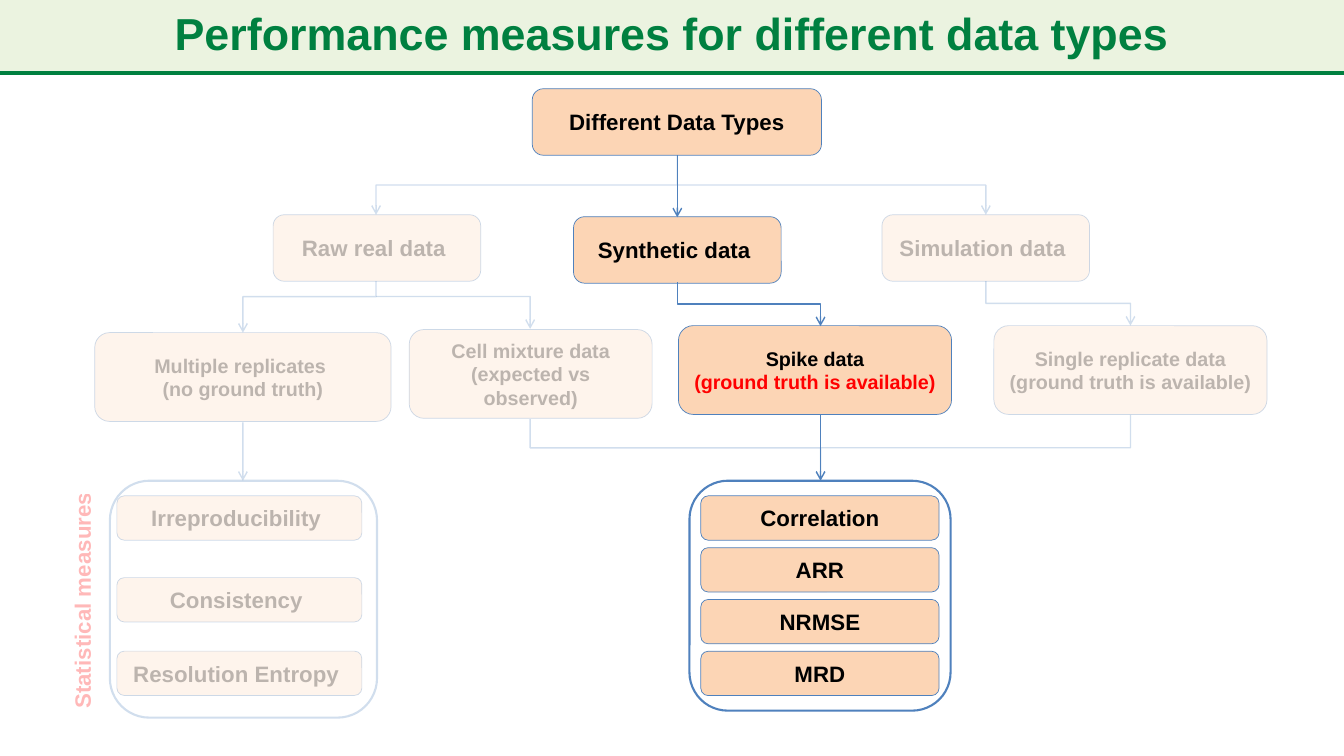
from lxml import etree
from pptx import Presentation
from pptx.dml.color import RGBColor
from pptx.enum.shapes import MSO_CONNECTOR, MSO_SHAPE
from pptx.enum.text import MSO_ANCHOR, PP_ALIGN
from pptx.oxml.ns import qn
from pptx.util import Pt

ROUNDED = MSO_SHAPE.ROUNDED_RECTANGLE
STRAIGHT, ELBOW = MSO_CONNECTOR.STRAIGHT, MSO_CONNECTOR.ELBOW
CENTER, MIDDLE = PP_ALIGN.CENTER, MSO_ANCHOR.MIDDLE

COLORS = {"green": "008040", "band": "EBF3E0", "peach": "FCD5B5",
          "blue": "4F81BD", "black": "000000", "red": "FF0000"}
FONT = "Arial"
LARGE, SMALL = 15.9, 14.1
FADED, FADED_EDGE, SOLID = 25, 28, 100

# Content
TITLE = "Performance measures for different data types"
SIDE_LABEL = "Statistical measures"

# Data types: lines, left, top, width, highlighted
TYPE_HEIGHT = 47.5
DATA_TYPES = [
    (["Different Data Types"], 380.2, 63.4, 206.6, True),
    (["Raw real data "], 195.1, 153.4, 148.3, False),
    (["Synthetic data "], 409.7, 154.8, 148.3, True),
    (["Simulation data "], 630, 153.4, 148.3, False),
]
SUBTYPE_HEIGHT = 63.4
SUBTYPES = [
    (["Multiple replicates ", "(no ground truth)"], 67.7, 237.6, 211.7, False),
    (["Cell mixture data", "(expected vs observed)"], 292.3, 235.4, 173.5, False),
    (["Spike data", "(ground truth is available)"], 484.6, 232.6, 195.1, True),
    (["Single replicate data", "(ground truth is available)"], 709.9, 232.6, 195.1, False),
]

# Measures: text and top
MEASURE_HEIGHT = 31.7
FIRST_MEASURE, MEASURE_STEP = 354.2, 37
NO_TRUTH_MEASURES = [("Irreproducibility ", 354.2), ("Consistency ", 412.6),
                     ("Resolution Entropy ", 465.1)]
TRUTH_MEASURES = [(name, FIRST_MEASURE + MEASURE_STEP * index)
                  for index, name in enumerate(["Correlation", "ARR", "NRMSE", "MRD"])]
# Groups: measures, box left, box width, frame (left, top, width, height), highlighted
GROUPS = [
    (NO_TRUTH_MEASURES, 83.5, 175, (78.5, 343.4, 190.8, 169.2), False),
    (TRUTH_MEASURES, 500.6, 170.2, (492.5, 343.4, 186.5, 164.2), True),
]

# Links that drop, cross and drop: start, end, drop share, highlighted
ROOT_X, RAW_X, SIM_X, TRUTH_X = 483.8, 268.6, 704.2, 586.1
REPLICATES_X, MIXTURE_X, SINGLE_X = 173.5, 378.7, 807.5
STEP_LINKS = [
    ((REPLICATES_X, 301.7), (REPLICATES_X, 343.4), 0.5, False),
    ((ROOT_X, 110.9), (RAW_X, 153.4), 0.5, False),
    ((RAW_X, 200.9), (REPLICATES_X, 237.6), 0.3, False),
    ((SIM_X, 200.9), (SINGLE_X, 232.6), 0.5, False),
    ((SINGLE_X, 296.4), (TRUTH_X, 343.4), 0.5, False),
    ((ROOT_X, 110.9), (ROOT_X, 155.2), 0.5, True),
    ((ROOT_X, 201.6), (TRUTH_X, 233), 0.5, True),
    ((TRUTH_X, 296), (TRUTH_X, 343.4), 0.5, True),
]
# Links with one corner: start, end, drops first, arrowhead
CORNER_LINKS = [
    ((ROOT_X, 132.2), (SIM_X, 153.4), False, True),
    ((RAW_X, 211.8), (MIXTURE_X, 234.9), False, True),
    ((MIXTURE_X, 299.3), (TRUTH_X, 319.9), True, False),
]


def paint(color_format, name, opacity=SOLID):
    color_format.rgb = RGBColor.from_string(COLORS[name])
    if opacity < SOLID:
        element = color_format._xFill.find(qn("a:srgbClr"))
        etree.SubElement(element, qn("a:alpha"), val=str(opacity * 1000))


def paint_fill(fill, name, opacity=SOLID):
    fill.solid()
    paint(fill.fore_color, name, opacity)


def paint_line(line, name, width, opacity=SOLID):
    line.width = Pt(width)
    paint_fill(line.fill, name, opacity)


def format_span(span, size, color, opacity=SOLID):
    span.font.name = FONT
    span.font.size = Pt(size)
    span.font.bold = True
    paint_fill(span.font.fill, color, opacity)


def add_rounded(left, top, width, height):
    box = slide.shapes.add_shape(ROUNDED, Pt(left), Pt(top), Pt(width), Pt(height))
    box.shadow.inherit = False
    return box


def add_box(lines, left, top, width, height, size, strong):
    box = add_rounded(left, top, width, height)
    opacity = SOLID if strong else FADED
    paint_fill(box.fill, "peach", opacity)
    paint_line(box.line, "blue", 0.5, SOLID if strong else FADED_EDGE)
    frame = box.text_frame
    frame.word_wrap = True
    frame.vertical_anchor = MIDDLE
    frame.text = "\n".join(lines)
    for index, para in enumerate(frame.paragraphs):
        para.alignment = CENTER
        color = "red" if strong and index else "black"
        format_span(para.runs[0], size, color, opacity)


def add_link(kind, start, end, color="blue", width=1, opacity=SOLID, arrow=True):
    link = slide.shapes.add_connector(kind, *(Pt(value) for value in (*start, *end)))
    paint_line(link.line, color, width, opacity)
    if arrow:
        etree.SubElement(link.line._get_or_add_ln(), qn("a:tailEnd"), type="arrow")
    etree.SubElement(link._element.spPr, qn("a:effectLst"))
    return link


def add_elbow(start, end, preset, drops_first, strong=False, arrow=True, share=None):
    (x1, y1), (x2, y2) = start, end
    across, down = abs(x2 - x1), y2 - y1
    if drops_first:  # lay the connector on its side, then turn it about its centre
        left, top = (x1 + x2 - down) / 2, (y1 + y2 - across) / 2
        start, end = (left, top), (left + down, top + across)
    link = add_link(ELBOW, start, end, opacity=SOLID if strong else FADED, arrow=arrow)
    properties = link._element.spPr
    if drops_first:
        properties.xfrm.set("rot", str((90 if x2 < x1 else 270) * 60000))
        if x2 > x1:
            properties.xfrm.set("flipH", "1")
    geometry = properties.find(qn("a:prstGeom"))
    geometry.set("prst", preset)
    if share is not None:
        etree.SubElement(geometry.find(qn("a:avLst")), qn("a:gd"),
                         name="adj1", fmla=f"val {round(share * 100000)}")


deck = Presentation()
deck.slide_width, deck.slide_height = Pt(960), Pt(540)
slide = deck.slides.add_slide(deck.slide_layouts[5])

# Title band and rule
title = slide.shapes.title
title.left, title.top, title.width, title.height = Pt(0), Pt(0), Pt(960), Pt(51.1)
paint_fill(title.fill, "band")
title.text_frame.text = TITLE
title.text_frame.vertical_anchor = MIDDLE
heading = title.text_frame.paragraphs[0]
heading.alignment = CENTER
heading.line_spacing = 0.9
format_span(heading.runs[0], 32, "green")
add_link(STRAIGHT, (0, 52), (960, 52), "green", 3, arrow=False)

# Measure groups
for measures, left, width, frame_place, strong in GROUPS:
    for name, top in measures:
        add_box([name], left, top, width, MEASURE_HEIGHT, LARGE, strong)
    outline = add_rounded(*frame_place)
    outline.fill.background()
    paint_line(outline.line, "blue", 1.5, SOLID if strong else FADED)

# Side label
label = slide.shapes.add_textbox(Pt(45.4), Pt(338.4), Pt(33.8), Pt(175))
label.text_frame.word_wrap = True
label.text_frame._txBody.bodyPr.set("vert", "vert270")
label.text_frame.text = SIDE_LABEL
format_span(label.text_frame.paragraphs[0].runs[0], LARGE, "red", 27)

# Tree boxes
for boxes, height, size in ((DATA_TYPES, TYPE_HEIGHT, LARGE), (SUBTYPES, SUBTYPE_HEIGHT, SMALL)):
    for lines, left, top, width, strong in boxes:
        add_box(lines, left, top, width, height, size, strong)

# Tree links
for start, end, drops_first, arrow in CORNER_LINKS:
    add_elbow(start, end, "bentConnector2", drops_first, arrow=arrow)
for start, end, share, strong in STEP_LINKS:
    if start[0] == end[0]:
        add_link(STRAIGHT, start, end, opacity=SOLID if strong else FADED)
    else:
        add_elbow(start, end, "bentConnector3", True, strong, share=share)

deck.save("out.pptx")
